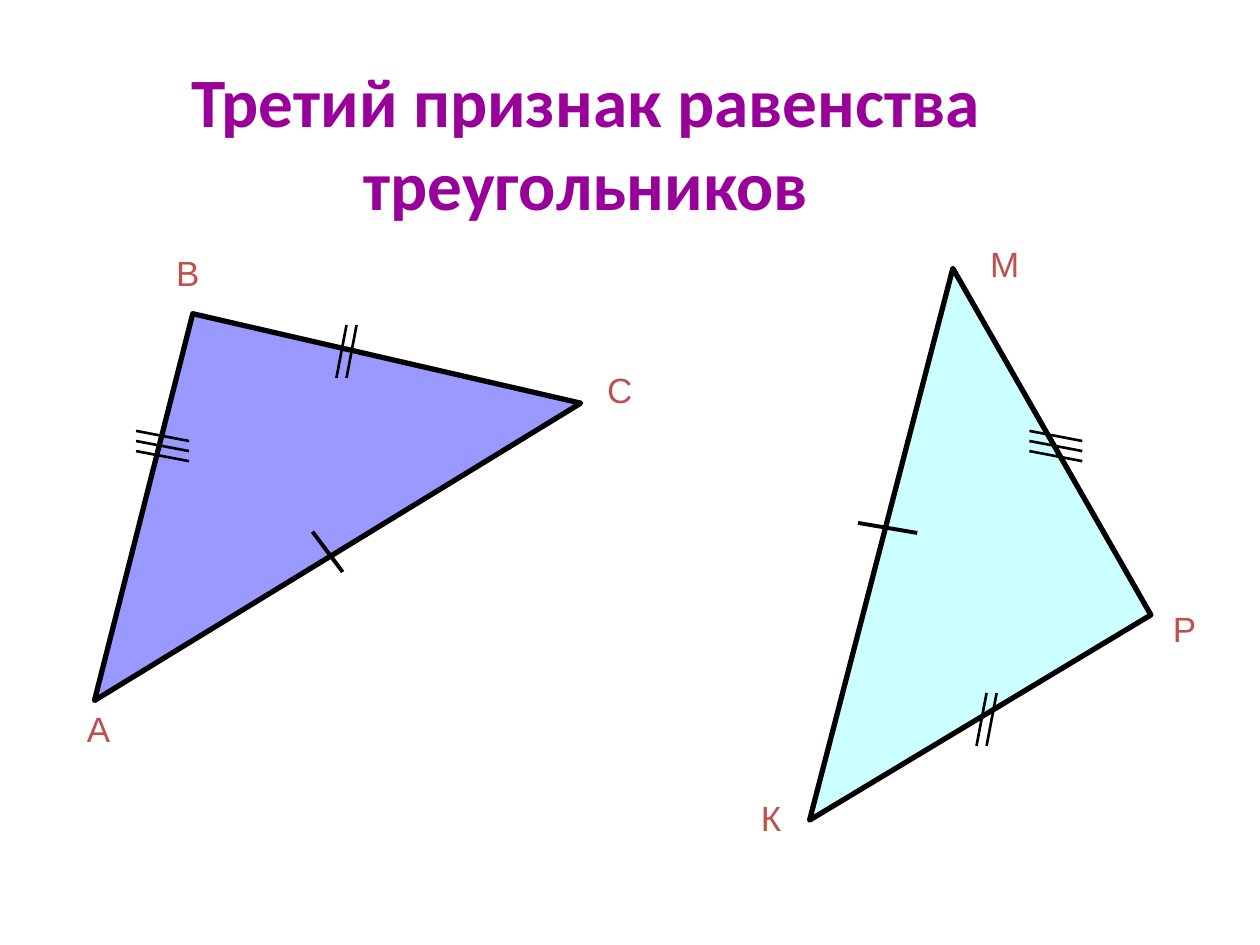
from lxml import etree
from pptx import Presentation
from pptx.dml.color import RGBColor
from pptx.enum.shapes import MSO_CONNECTOR
from pptx.enum.text import MSO_ANCHOR, MSO_AUTO_SIZE, PP_ALIGN
from pptx.oxml.ns import qn
from pptx.util import Inches, Pt

STRAIGHT = MSO_CONNECTOR.STRAIGHT
BOTTOM = MSO_ANCHOR.BOTTOM
NO_FIT = MSO_AUTO_SIZE.NONE
CENTER = PP_ALIGN.CENTER

VERTICES = [(0.78, 0), (3.86, 0.71), (0, 3.07)]
DOUBLE_RUN, DOUBLE_STEP = (-0.08, 0.42), (0.08, 0)
TRIPLE_RUN, TRIPLE_STEP = (0.42, 0.08), (0, 0.08)


def rgb(value):
    """Turn a hex string into a colour."""
    return RGBColor.from_string(value)


def add_run(p, text, font, size, color, bold=False):
    """Add one formatted run to a paragraph."""
    r = p.add_run()
    r.text = text
    r.font.name, r.font.size, r.font.bold = font, Pt(size), bold
    r.font.color.rgb = rgb(color)


def add_title(s, left, top, width, height):
    """Place the slide title in the given box."""
    sp = s.shapes.title
    sp.left, sp.top = Inches(left), Inches(top)
    sp.width, sp.height = Inches(width), Inches(height)
    tf = sp.text_frame
    tf.word_wrap, tf.auto_size, tf.vertical_anchor = True, NO_FIT, BOTTOM
    p = tf.paragraphs[0]
    p.alignment = CENTER
    add_run(p, "Третий признак равенства треугольников",
            "Calibri", 39.6, "990099", True)


def add_ticks(s, left, top, run, count=1, step=(0, 0), weight=1.5):
    """Draw equally spaced parallel marks that start at a point."""
    for i in range(count):
        x, y = left + i * step[0], top + i * step[1]
        line = s.shapes.add_connector(
            STRAIGHT, Inches(x), Inches(y),
            Inches(x + run[0]), Inches(y + run[1]))
        line.line.color.rgb = rgb("000000")
        line.line.width = Pt(weight)
        etree.SubElement(line._element.spPr, qn("a:effectLst"))


def add_label(s, text, left, top, width):
    """Write the letter of a vertex."""
    sp = s.shapes.add_textbox(
        Inches(left), Inches(top), Inches(width), Inches(0.38))
    tf = sp.text_frame
    tf.word_wrap = True
    p = tf.paragraphs[0]
    p.line_spacing = 0.76
    add_run(p, text, "Arial", 20, "C0504D")


def add_triangle(s, left, top, rotation, fill, single, single_run,
                 double, triple, labels):
    """Draw a triangle with side marks and labels offset from its box."""
    points = [(Inches(x), Inches(y)) for x, y in VERTICES]
    builder = s.shapes.build_freeform(*points[0])
    builder.add_line_segments(points[1:], close=True)
    sp = builder.convert_to_shape(Inches(left), Inches(top))
    sp.rotation = rotation
    sp.shadow.inherit = False
    sp.fill.solid()
    sp.fill.fore_color.rgb = rgb(fill)
    sp.line.color.rgb = rgb("000000")
    sp.line.width = Pt(3)
    etree.SubElement(sp.line._get_or_add_ln(), qn("a:round"))
    add_ticks(s, left + single[0], top + single[1], single_run, weight=2.25)
    add_ticks(s, left + double[0], top + double[1],
              DOUBLE_RUN, 2, DOUBLE_STEP)
    add_ticks(s, left + triple[0], top + triple[1],
              TRIPLE_RUN, 3, TRIPLE_STEP)
    for text, x, y, width in labels:
        add_label(s, text, left + x, top + y, width)


def main():
    """Build the slide and save it."""
    prs = Presentation()
    prs.slide_width, prs.slide_height = Inches(10), Inches(7.5)
    s = prs.slides.add_slide(prs.slide_layouts[5])
    add_title(s, 0.39, 0.39, 8.52, 1.44)
    add_triangle(
        s, 0.75, 2.49, 0, "9999FF",
        single=(1.73, 1.73), single_run=(0.24, 0.32),
        double=(2, 0.09), triple=(0.33, 0.93),
        labels=[("А", -0.16, 3.15, 0.39), ("В", 0.55, -0.47, 0.47),
                ("С", 3.97, 0.46, 0.35)])
    add_triangle(
        s, 5.31, 3.04, 136, "CCFFFF",
        single=(1.5, 1.11), single_run=(0.47, 0.08),
        double=(2.52, 2.46), triple=(2.86, 0.38),
        labels=[("К", 0.63, 3.31, 0.4), ("М", 2.45, -1.09, 0.55),
                ("Р", 3.9, 1.81, 0.43)])
    prs.save("out.pptx")


if __name__ == "__main__":
    main()
